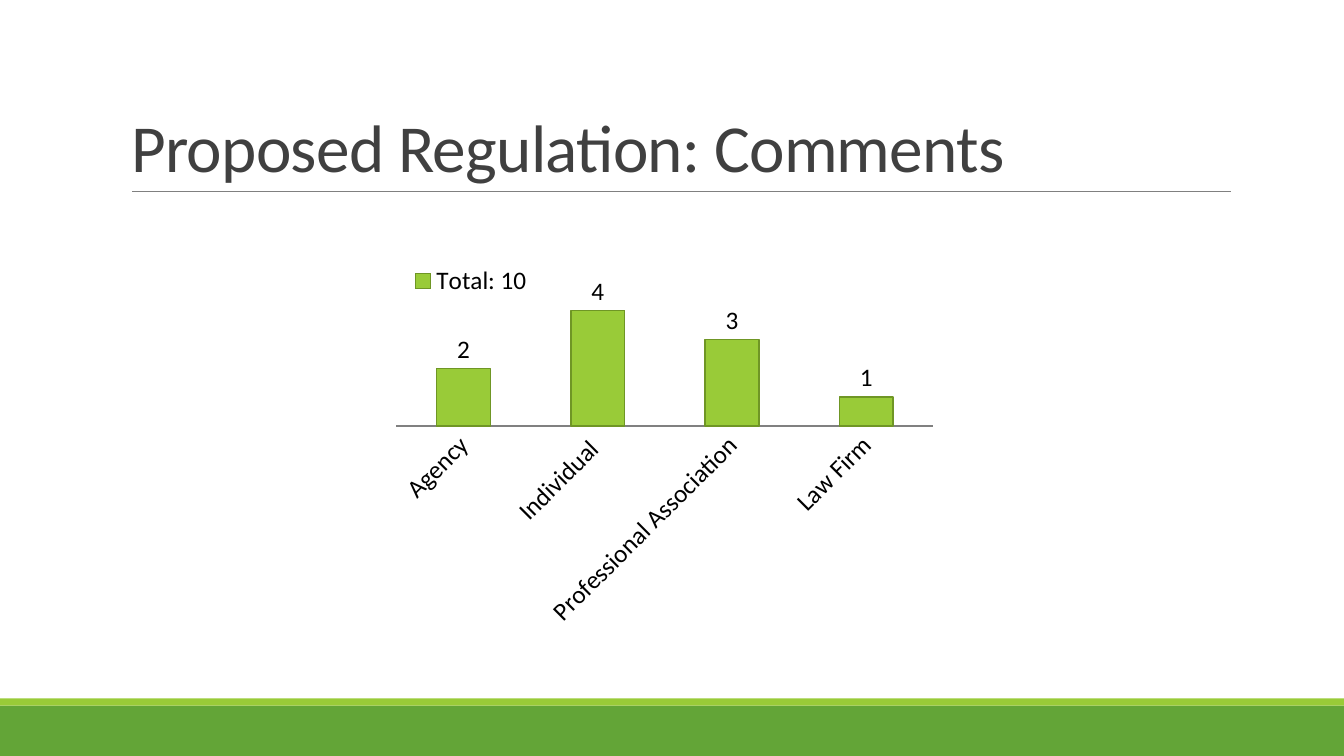
from lxml import etree
from pptx import Presentation
from pptx import util as u
from pptx.chart.data import CategoryChartData
from pptx.dml.color import RGBColor
from pptx.enum import chart as charts, shapes, text
from pptx.oxml import parse_xml
from pptx.oxml.ns import nsdecls, qn

GREEN = RGBColor(0x63, 0xA5, 0x37)
LIME = RGBColor(0x99, 0xCB, 0x38)
OLIVE = RGBColor(0x6F, 0x96, 0x25)
GRAY = RGBColor(0x80, 0x80, 0x80)
DARK = RGBColor(0x40, 0x40, 0x40)
BLACK = RGBColor(0, 0, 0)
FONT = "Calibri"


def manual_layout(**shares):
    """Chart layout with the given shares of the chart's size."""
    modes = '<c:layoutTarget val="inner"/>' if "w" in shares else ""
    modes += '<c:xMode val="edge"/><c:yMode val="edge"/>'
    sizes = "".join(f'<c:{key} val="{share}"/>' for key, share in shares.items())
    return parse_xml(f'<c:layout {nsdecls("c")}><c:manualLayout>{modes}{sizes}'
                     '</c:manualLayout></c:layout>')


deck = Presentation()
deck.slide_width, deck.slide_height = u.Inches(13.33), u.Inches(7.5)
page = deck.slides.add_slide(deck.slide_layouts[5])

# Footer bands
for top, height, color in ((7, 0.5, GREEN), (6.93, 0.07, LIME)):
    band = page.shapes.add_shape(shapes.MSO_SHAPE.RECTANGLE, 0, u.Inches(top),
                                 deck.slide_width, u.Inches(height))
    band.shadow.inherit = False
    band.fill.solid()
    band.fill.fore_color.rgb = color
    band.line.fill.background()

# Rule under the title
rule = page.shapes.add_connector(shapes.MSO_CONNECTOR.STRAIGHT, u.Inches(1.31),
                                 u.Inches(1.9), u.Inches(12.21), u.Inches(1.9))
rule.line.color.rgb = GRAY
rule.line.width = u.Pt(0.5)
etree.SubElement(rule._element.spPr, qn("a:effectLst"))

# Title
title = page.shapes.title
title.left, title.top = u.Inches(1.2), u.Inches(0.31)
title.width, title.height = u.Inches(11), u.Inches(1.59)
frame = title.text_frame
frame.word_wrap = True
frame.auto_size = text.MSO_AUTO_SIZE.NONE
frame.vertical_anchor = text.MSO_ANCHOR.BOTTOM
para = frame.paragraphs[0]
para.alignment = text.PP_ALIGN.LEFT
para.line_spacing = 0.85
span = para.add_run()
span.text = "Proposed Regulation: Comments"
span.font.name, span.font.size = FONT, u.Pt(48)
span.font.color.rgb = DARK
span.font._element.set("spc", "-50")

# Chart of comments by type of commenter
comments = CategoryChartData()
comments.categories = ["Agency", "Individual ", "Professional Association", "Law Firm"]
comments.add_series("Total: 10", (2, 4, 3, 1))
chart = page.shapes.add_chart(charts.XL_CHART_TYPE.COLUMN_CLUSTERED, u.Inches(3.82),
                              u.Inches(2.39), u.Inches(5.55), u.Inches(3.91),
                              comments).chart
chart.has_title = False
chart.font.name, chart.font.size = FONT, u.Pt(18)
chart.font.color.rgb = BLACK

# Columns and their labels
plot = chart.plots[0]
plot.gap_width, plot.overlap, plot.vary_by_categories = 150, -25, False
columns = plot.series[0].format
columns.fill.solid()
columns.fill.fore_color.rgb = LIME
columns.line.color.rgb = OLIVE
columns.line.width = u.Pt(1)
plot.has_data_labels = True
plot.data_labels.show_value = True
plot.data_labels.position = charts.XL_LABEL_POSITION.OUTSIDE_END

# Axes
chart.value_axis.visible = False
chart.value_axis.has_major_gridlines = False
chart.value_axis.minimum_scale, chart.value_axis.maximum_scale = 0, 4.5
axis = chart.category_axis
axis.major_tick_mark = charts.XL_TICK_MARK.NONE
axis.format.line.color.rgb = GRAY
axis.format.line.width = u.Pt(1)
axis.tick_labels.font.size = u.Pt(18)
axis._element.find(qn("c:txPr")).find(qn("a:bodyPr")).set("rot", "-2700000")

# Legend and plot positions
chart.has_legend = True
legend = chart.legend
legend.position = charts.XL_LEGEND_POSITION.TOP
legend.include_in_layout = False
legend._element.find(qn("c:legendPos")).addnext(manual_layout(x=0.04, y=0.05))
area = chart._chartSpace.chart.plotArea
for old in area.findall(qn("c:layout")):
    area.remove(old)
area.insert(0, manual_layout(x=0.02, y=0.14, w=0.96, h=0.33))

deck.save("out.pptx")
